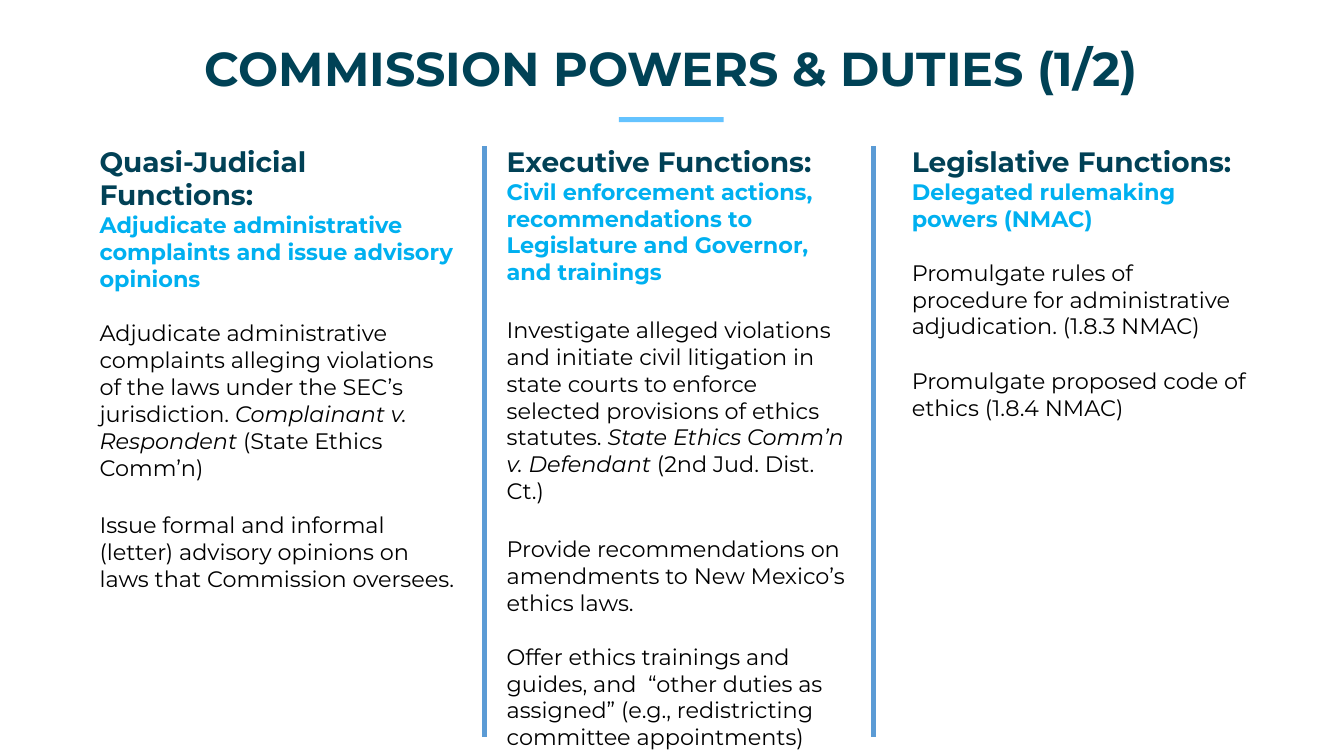
from lxml import etree
from pptx import Presentation, util as u
from pptx.dml.color import RGBColor
from pptx.enum import shapes, text

HUES = {"title": "004256", "head": "014156", "lead": "00B0F0",
        "body": "000000", "rule": "5B9BD5", "bar": "64C3FF"}
STYLES = {
    "title": {"size": u.Pt(34), "bold": True},
    "head": {"size": u.Pt(20), "bold": True},
    "lead": {"size": u.Pt(16), "bold": True},
    "body": {"size": u.Pt(16), "bold": False},
}
SMALL, LARGE = 19.5, 22  # gaps above paragraphs, in points

# Column: left, width, height, paragraphs of (style, gap above, runs);
# every second run is italic.
COLUMNS = [
    (2.26, 9.53, 12.32, [
        ("head", 0, ["Quasi-Judicial Functions:"]),
        ("lead", 0, ["Adjudicate administrative complaints and issue advisory opinions"]),
        ("body", SMALL, ["Adjudicate administrative complaints alleging violations "
                         "of the laws under the SEC’s jurisdiction. ",
                         "Complainant v. Respondent ", "(State Ethics Comm’n) "]),
        ("body", LARGE, ["Issue formal and informal (letter) advisory opinions "
                         "on laws that Commission oversees."]),
    ]),
    (12.52, 9.25, 15.57, [
        ("head", 0, ["Executive Functions: "]),
        ("lead", 0, ["Civil enforcement actions, "]),
        ("lead", 0, ["recommendations to Legislature and Governor, and trainings"]),
        ("body", LARGE, ["Investigate alleged violations and initiate civil litigation in "
                         "state courts to enforce selected provisions of ethics statutes. ",
                         "State Ethics Comm’n v. Defendant ", "(2nd Jud. Dist. Ct.)"]),
        ("body", LARGE, ["Provide recommendations on amendments to "
                         "New Mexico’s ethics laws."]),
        ("body", SMALL, ["Offer ethics trainings and guides, and  “other duties as "
                         "assigned” (e.g., redistricting committee appointments)"]),
    ]),
    (22.73, 8.99, 8.03, [
        ("head", 0, ["Legislative Functions: "]),
        ("lead", 0, ["Delegated rulemaking powers (NMAC)"]),
        ("body", SMALL, ["Promulgate rules of procedure for "
                         "administrative adjudication. (1.8.3 NMAC)"]),
        ("body", SMALL, ["Promulgate proposed code of ethics (1.8.4 NMAC)"]),
    ]),
]


def add_run(para, words, style, italic=False):
    run = para.add_run()
    run.text = words
    run.font.name = "Montserrat"
    run.font.italic = italic
    run.font.color.rgb = RGBColor.from_string(HUES[style])
    for name, value in STYLES[style].items():
        setattr(run.font, name, value)


deck = Presentation()
deck.slide_width, deck.slide_height = u.Cm(33.87), u.Cm(19.05)
slide = deck.slides.add_slide(deck.slide_layouts[5])

# Title
title = slide.shapes.title
title.left, title.top = u.Cm(0.25), u.Cm(1.24)
title.width, title.height = u.Cm(33.32), u.Cm(0.91)
frame = title.text_frame
frame_format = {"margin_left": 0, "margin_top": 0, "margin_right": 0, "margin_bottom": 0,
                "word_wrap": True, "auto_size": text.MSO_AUTO_SIZE.NONE,
                "vertical_anchor": text.MSO_ANCHOR.TOP}
for name, value in frame_format.items():
    setattr(frame, name, value)
para = frame.paragraphs[0]
para.alignment = text.PP_ALIGN.CENTER
para.line_spacing, para.space_after = u.Pt(33.1), u.Pt(6)
add_run(para, "COMMISSION POWERS & DUTIES (1/2)", "title")

# Bar under the title
bar = slide.shapes.add_shape(shapes.MSO_SHAPE.RECTANGLE,
                             u.Cm(15.6), u.Cm(2.95), u.Cm(2.64), u.Cm(0.13))
bar.shadow.inherit = False
bar.fill.solid()
bar.fill.fore_color.rgb = RGBColor.from_string(HUES["bar"])
bar.line.fill.background()

# Text columns
for left, width, height, paras in COLUMNS:
    box = slide.shapes.add_textbox(u.Cm(left), u.Cm(3.51), u.Cm(width), u.Cm(height))
    frame = box.text_frame
    frame.word_wrap = True
    frame.auto_size = text.MSO_AUTO_SIZE.SHAPE_TO_FIT_TEXT
    for row, (style, gap, runs) in enumerate(paras):
        para = frame.add_paragraph() if row else frame.paragraphs[0]
        para.space_before = u.Pt(gap)
        for spot, words in enumerate(runs):
            add_run(para, words, style, spot % 2 == 1)

# Rules between the columns
for x in (12.22, 22.02):
    rule = slide.shapes.add_connector(shapes.MSO_CONNECTOR.STRAIGHT,
                                      u.Cm(x), u.Cm(3.68), u.Cm(x), u.Cm(18.57))
    rule.line.width = u.Pt(3.5)
    rule.line.color.rgb = RGBColor.from_string(HUES["rule"])
    etree.SubElement(rule.element.spPr,
                     "{http://schemas.openxmlformats.org/drawingml/2006/main}effectLst")

deck.save("out.pptx")
